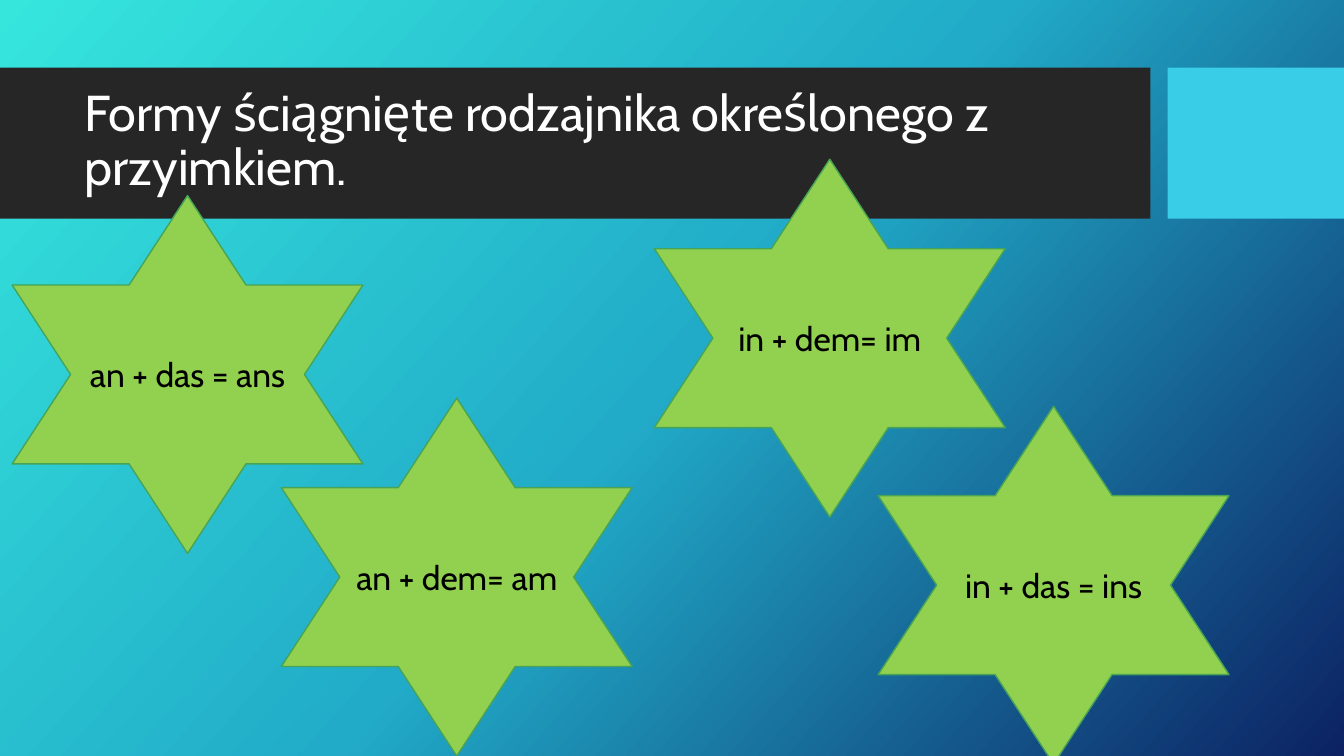
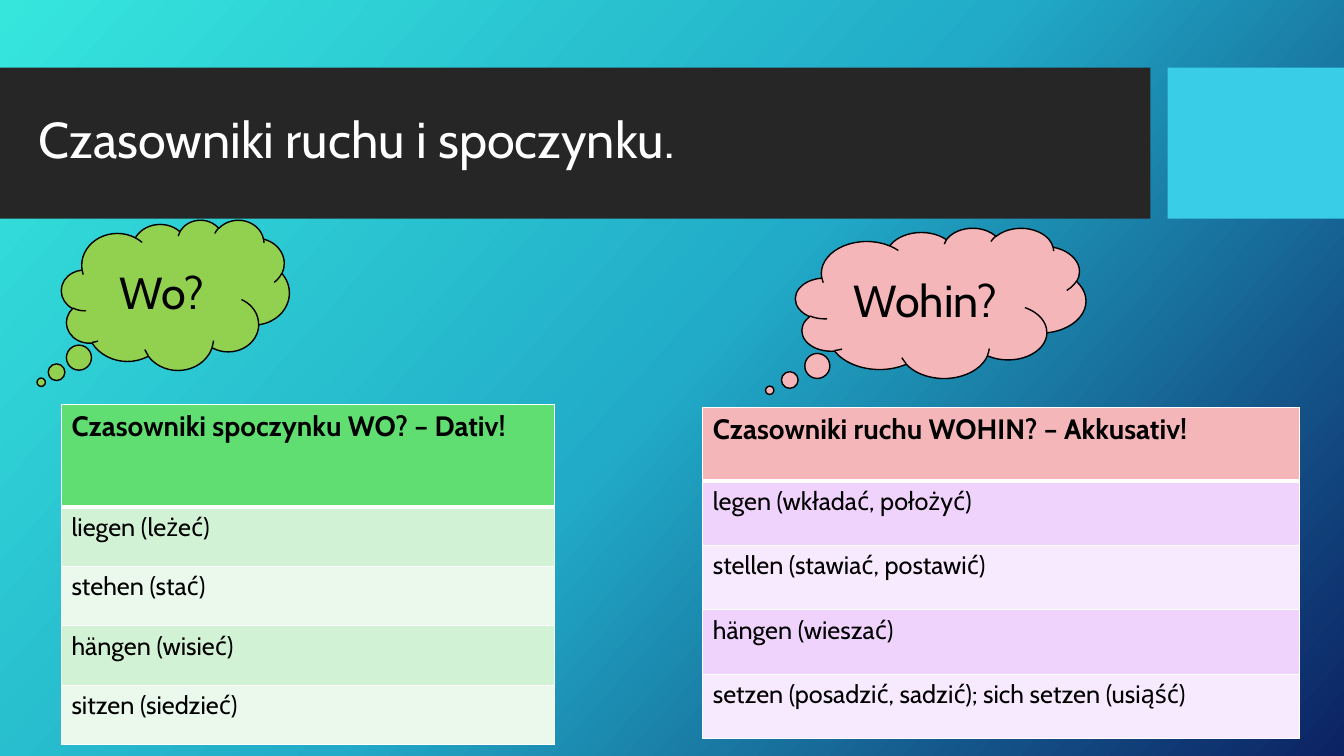
"""Build two German grammar slides: contracted articles, and verbs of motion and rest."""
import copy

import lxml.etree
import pptx
import pptx.dml.color
import pptx.enum.shapes
import pptx.enum.text
import pptx.oxml.ns
import pptx.util

Inches = pptx.util.Inches
Pt = pptx.util.Pt
kinds = pptx.enum.shapes.MSO_SHAPE
sides = pptx.enum.text.PP_ALIGN
qn = pptx.oxml.ns.qn

BLACK, WHITE = "000000", "FFFFFF"
GREEN, PINK = "92D050", "F4B6B9"


def hue(code):
    return pptx.dml.color.RGBColor.from_string(code)


def write(frame, text, size=18, color=BLACK, bold=False, align=sides.LEFT, space=None):
    para = frame.paragraphs[0]
    para.alignment = align
    para.line_spacing = space
    run = para.add_run()
    run.text = text
    run.font.name = "Cabin"
    run.font.size = Pt(size)
    run.font.bold = bold
    run.font.color.rgb = hue(color)


deck = pptx.Presentation()
deck.slide_width, deck.slide_height = Inches(13.33), Inches(7.5)
layout = deck.slide_layouts[5]

fill = layout.background.fill
fill.gradient()
fill.gradient_angle = 318
stops = layout.element.find(".//" + qn("a:gsLst"))
stops.insert(1, copy.deepcopy(stops[0]))
for stop, (place, code) in zip(
    fill.gradient_stops, [(0, "36E6DD"), (0.5, "21ABC8"), (1, "0C2263")]
):
    stop.position = place
    stop.color.rgb = hue(code)

titles = [
    ("Formy ściągnięte rodzajnika określonego z przyimkiem.", 0.74, 10.51),
    ("Czasowniki ruchu i spoczynku.", 0.28, 10.98),
]
slides = []
for text, left, width in titles:
    slide = deck.slides.add_slide(layout)
    title = slide.shapes.title
    title.left, title.top = Inches(left), Inches(0.82)
    title.width, title.height = Inches(width), Inches(1.18)
    title.text_frame.auto_size = pptx.enum.text.MSO_AUTO_SIZE.NONE
    title.text_frame.vertical_anchor = pptx.enum.text.MSO_ANCHOR.MIDDLE
    write(title.text_frame, text, size=36, color=WHITE, space=0.9)
    slides.append(slide)
forms, verbs = slides

for left, width, code in [(0, 11.41, "262626"), (11.58, 1.75, "39CDE7")]:
    band = forms.shapes.add_shape(
        kinds.RECTANGLE, Inches(left), Inches(0.67), Inches(width), Inches(1.5)
    )
    band.shadow.inherit = False
    band.fill.solid()
    band.fill.fore_color.rgb = hue(code)
    band.line.fill.background()
    layout.shapes.element.insert(2, band.element)

stars = [
    ("an + das = ans", 0.12, 1.94),
    ("an + dem= am", 2.79, 3.95),
    ("in + dem= im", 6.49, 1.58),
    ("in + das = ins", 8.71, 4.03),
]
clouds = [("Wo? ", 0.61, 2.18, 2.26, GREEN), ("Wohin? ", 7.89, 2.26, 2.88, PINK)]
labels = [
    (forms, kinds.STAR_6_POINT, text, 24, (left, top, 3.48, 3.55), GREEN, "47A454")
    for text, left, top in stars
] + [
    (verbs, kinds.CLOUD_CALLOUT, text, 32, (left, top, width, 1.49), code, BLACK)
    for text, left, top, width, code in clouds
]
for slide, kind, text, size, box, code, edge in labels:
    shape = slide.shapes.add_shape(kind, *map(Inches, box))
    shape.shadow.inherit = False
    shape.fill.solid()
    shape.fill.fore_color.rgb = hue(code)
    shape.line.color.rgb = hue(edge)
    shape.line.width = Pt(1)
    if kind == kinds.CLOUD_CALLOUT:
        shape.adjustments[0], shape.adjustments[1] = -0.589, 0.582
    write(shape.text_frame, text, size=size, align=sides.CENTER)

tables = [
    (
        (6.97, 4.04, 5.92), (0.73, 0.64), (PINK, "F0D3FD", "F7EAFE"),
        [
            "Czasowniki ruchu WOHIN? – Akkusativ!",
            "legen (wkładać, położyć)",
            "stellen (stawiać, postawić)",
            "hängen (wieszać)",
            "setzen (posadzić, sadzić); sich setzen (usiąść)",
        ],
    ),
    (
        (0.61, 4.01, 4.89), (1.02, 0.59), ("60DE72", "D2F2D5", "EAF9EB"),
        [
            "Czasowniki spoczynku WO? – Dativ!",
            "liegen (leżeć)",
            "stehen (stać)",
            "hängen (wisieć)",
            "sitzen (siedzieć)",
        ],
    ),
]
for (left, top, width), (head, body), (main, dark, light), texts in tables:
    high = head + body * (len(texts) - 1)
    grid = verbs.shapes.add_table(
        len(texts), 1, Inches(left), Inches(top), Inches(width), Inches(high)
    ).table
    for row, text in enumerate(texts):
        first = row == 0
        grid.rows[row].height = Inches(head if first else body)
        cell = grid.cell(row, 0)
        write(cell.text_frame, text, size=20 if first else 18, bold=first)
        props = cell._tc.get_or_add_tcPr()
        for side in "LRTB":
            thick = (row, side) in [(0, "B"), (1, "T")]
            line = lxml.etree.SubElement(
                props, qn("a:ln" + side), w=str(Pt(3 if thick else 1))
            )
            paint = lxml.etree.SubElement(line, qn("a:solidFill"))
            lxml.etree.SubElement(paint, qn("a:srgbClr"), val=WHITE)
        cell.fill.solid()
        cell.fill.fore_color.rgb = hue(main if first else dark if row % 2 else light)

deck.save("out.pptx")
